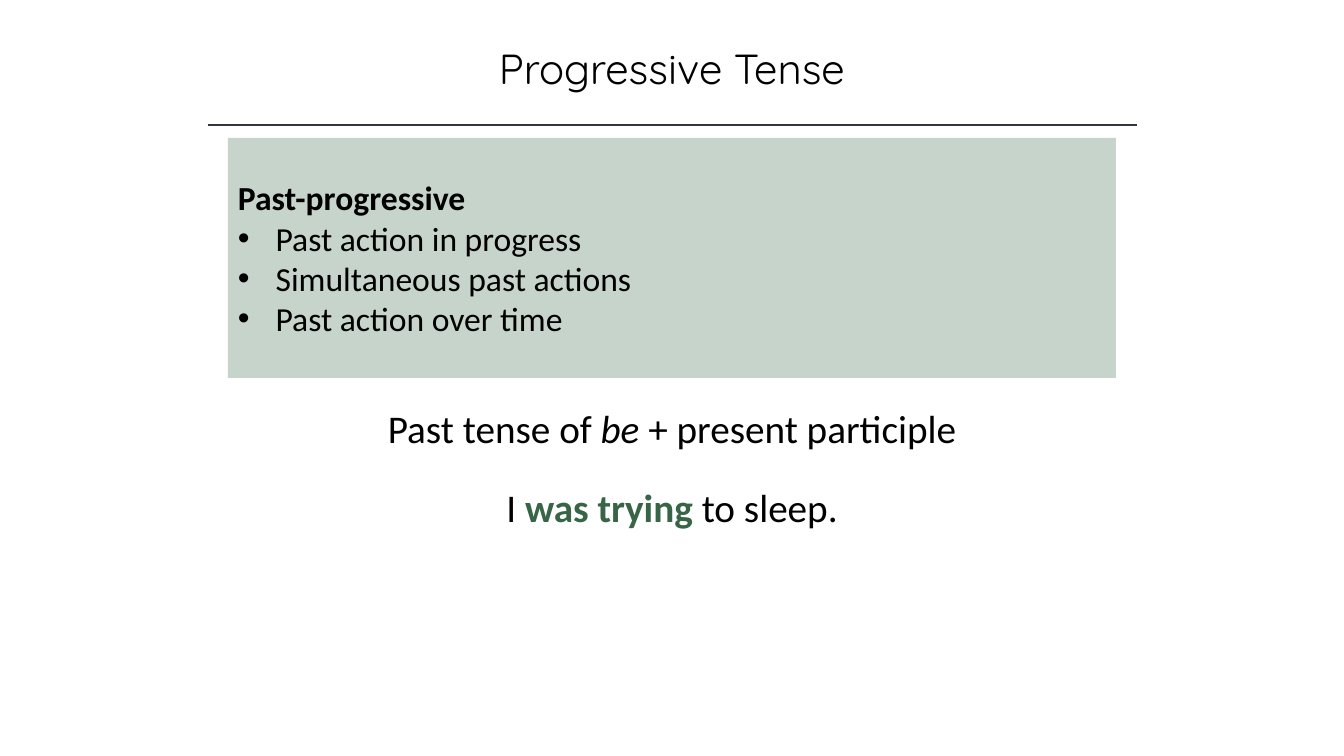
from pptx import Presentation
from pptx.dml.color import RGBColor
from pptx.enum.shapes import MSO_CONNECTOR as Conn, MSO_SHAPE as Kind
from pptx.enum.text import MSO_ANCHOR as Anchor, MSO_AUTO_SIZE as Fit, PP_ALIGN as Align
from pptx.oxml.ns import qn
from pptx.util import Pt
from lxml.etree import SubElement as Sub


def color(code):
    return RGBColor.from_string(code)


class Page:
    ink = "000000"
    green = "386546"
    pale = "C7D4CB"
    slate = "323542"
    body = "Calibri"
    head = "Quicksand"

    def __init__(self, slide):
        self.shapes = slide.shapes

    def font(self, run, size, face=None, tint=None, bold=None, slant=None):
        font = run.font
        font.size = Pt(size)
        font.name = face or self.body
        font.color.rgb = color(tint or self.ink)
        font.bold = bold
        font.italic = slant

    def text(self, box, parts, size, face=None, wrap=False):
        frame = self.shapes.add_textbox(*map(Pt, box)).text_frame
        frame.word_wrap = wrap
        frame.auto_size = Fit.SHAPE_TO_FIT_TEXT
        line = frame.paragraphs[0]
        line.alignment = Align.CENTER
        line.text = parts[0][0]
        for words, _ in parts[1:]:
            line.add_run().text = words
        for run, (_, style) in zip(line.runs, parts):
            self.font(run, size, face, **style)

    def rule(self, left, right, top):
        line = self.shapes.add_connector(Conn.STRAIGHT, Pt(left), Pt(top), Pt(right), Pt(top))
        line.line.color.rgb = color(self.slate)
        line.line.width = Pt(1)
        Sub(line._element.spPr, qn("a:effectLst"))

    def bullet(self, line, indent):
        props = line._p.get_or_add_pPr()
        props.set("marL", str(Pt(indent)))
        props.set("indent", str(-Pt(indent)))
        Sub(props, qn("a:buFont"), typeface="Arial")
        Sub(props, qn("a:buChar"), char="•")

    def panel(self, box, title, items, size):
        shape = self.shapes.add_shape(Kind.RECTANGLE, *map(Pt, box))
        shape.shadow.inherit = False
        shape.fill.solid()
        shape.fill.fore_color.rgb = color(self.pale)
        shape.line.fill.background()
        frame = shape.text_frame
        frame.word_wrap = True
        frame.vertical_anchor = Anchor.MIDDLE
        frame.text = "\n".join([title, *items])
        for place, line in enumerate(frame.paragraphs):
            line.alignment = Align.LEFT
            if place:
                self.bullet(line, 27)
            self.font(line.runs[0], size, bold=place == 0)


def main():
    deck = Presentation()
    deck.slide_width, deck.slide_height = Pt(960), Pt(540)
    page = Page(deck.slides.add_slide(deck.slide_layouts[6]))

    page.text((120, 26.6, 720, 44), [("Progressive Tense", {})], 30, page.head, True)
    page.rule(148.3, 812.2, 89.3)
    page.text((266.5, 285, 427, 41),
              [("Past tense of ", {}), ("be", {"slant": True}), (" + present participle", {})], 28)
    page.text((353, 342, 254, 41),
              [("I ", {}), ("was trying", {"tint": page.green, "bold": True}), (" to sleep.", {})], 28)
    page.panel((162.8, 98.5, 634.4, 171.5), "Past-progressive",
               ["Past action in progress", "Simultaneous past actions", "Past action over time"], 24)

    deck.save("out.pptx")


if __name__ == "__main__":
    main()
